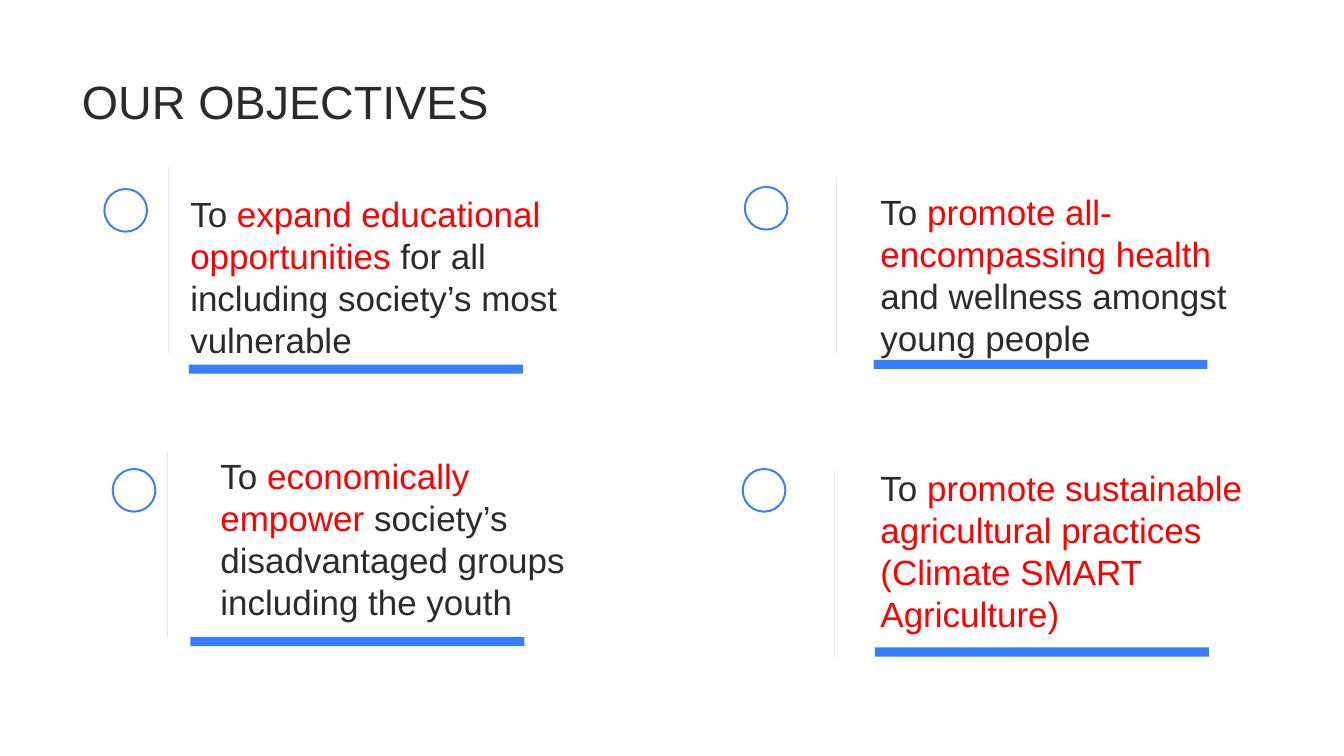
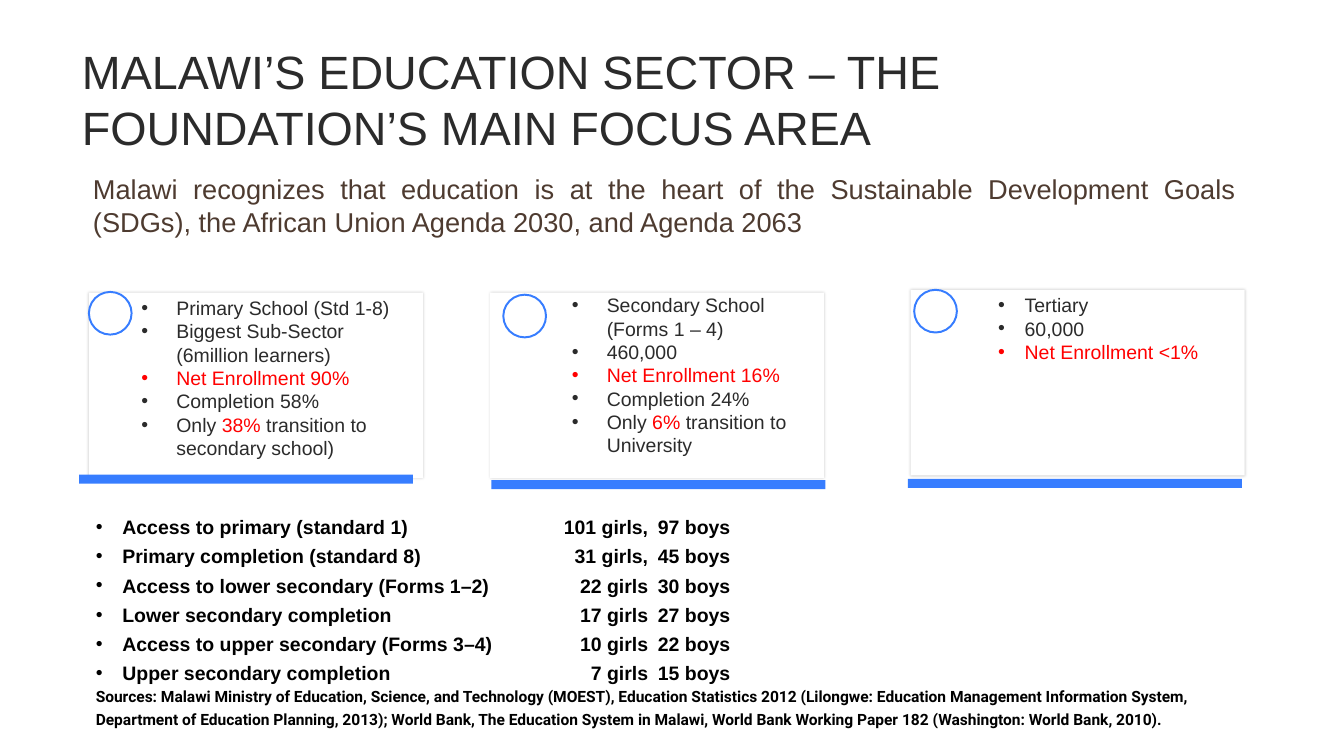
from lxml.etree import SubElement
from pptx import Presentation
from pptx.dml.color import RGBColor
from pptx.enum.shapes import MSO_CONNECTOR, MSO_SHAPE
from pptx.enum.text import MSO_ANCHOR, MSO_AUTO_SIZE, PP_ALIGN
from pptx.oxml.ns import qn
from pptx.util import Inches, Pt

INK = RGBColor(0x2B, 0x2B, 0x2B)
BLACK = RGBColor(0, 0, 0)
RED = RGBColor(0xFF, 0, 0)
BLUE = RGBColor(0x37, 0x7D, 0xFF)
BROWN = RGBColor(0x4E, 0x3B, 0x30)
GREY = RGBColor(0xE6, 0xE6, 0xE6)
WHITE = RGBColor(0xFF, 0xFF, 0xFF)
BAR = (4.77, 0.13)
RING = (0.61, 0.61)
CARD = (4.77, 2.65)


def write(box, text, size=20, color=INK, font="Arial", bold=False,
          align=PP_ALIGN.LEFT, indent=0, space=None):
    frame = box.text_frame
    frame.word_wrap = True
    frame.auto_size = MSO_AUTO_SIZE.NONE
    for row, line in enumerate(text.split("\n")):
        para = frame.add_paragraph() if row else frame.paragraphs[0]
        para.alignment = align
        if space:
            para.line_spacing = space
        if indent:
            props = para._p.get_or_add_pPr()
            props.set("marL", str(Inches(indent)))
            props.set("indent", str(-Inches(indent)))
            SubElement(props, qn("a:buFont")).set("typeface", "Arial")
            SubElement(props, qn("a:buChar")).set("char", "•")
        for part, words in enumerate(line.split("|")):
            if words:
                run = para.add_run()
                run.text = words
                run.font.size = Pt(size)
                run.font.name = font
                run.font.bold = bold
                run.font.color.rgb = RED if part % 2 else color


def draw(slide, kind, spot, size, fill, line=None):
    shape = slide.shapes.add_shape(kind, *map(Inches, spot + size))
    shape.shadow.inherit = False
    shape.fill.solid()
    shape.fill.fore_color.rgb = fill
    if line:
        shape.line.color.rgb = line
        shape.line.width = Pt(2)
    else:
        shape.line.fill.background()
    return shape


deck = Presentation()
deck.slide_width, deck.slide_height = Inches(19.2), Inches(10.8)

slides = []
for text, place in [
    ("OUR OBJECTIVES", (1.07, 0.85, 10.72, 1.19)),
    ("MALAWI’S EDUCATION SECTOR – THE FOUNDATION’S MAIN FOCUS AREA",
     (1.07, 0.62, 16.67, 1.58)),
]:
    slide = deck.slides.add_slide(deck.slide_layouts[5])
    title = slide.shapes.title
    title.left, title.top, title.width, title.height = map(Inches, place)
    title.text_frame.vertical_anchor = MSO_ANCHOR.MIDDLE
    write(title, text, size=48)
    slides.append(slide)
goals, sector = slides

for text, place, ring, bar, rule, weight in [
    ("To |expand educational opportunities |for all including society’s most vulnerable",
     (2.62, 2.7, 6.44, 2.52), (1.49, 2.7), (2.7, 5.21), (2.4, 2.39, 5.04), 1),
    ("To |promote all-encompassing health |and wellness amongst young people",
     (12.48, 2.67, 5.87, 2.52), (10.64, 2.67), (12.48, 5.14), (11.94, 2.53, 5.04), 0.5),
    ("To |economically empower |society’s disadvantaged groups including the youth",
     (3.05, 6.45, 5.73, 2.52), (1.61, 6.7), (2.72, 9.1), (2.39, 6.46, 9.1), 1),
    ("To |promote sustainable agricultural practices (Climate SMART Agriculture)",
     (12.48, 6.62, 5.6, 2.52), (10.61, 6.7), (12.5, 9.25), (11.92, 6.73, 9.38), 1),
]:
    draw(goals, MSO_SHAPE.RECTANGLE, bar, BAR, BLUE)
    draw(goals, MSO_SHAPE.OVAL, ring, RING, WHITE, BLUE)
    write(goals.shapes.add_textbox(*map(Inches, place)), text, size=36)
    x, top, end = map(Inches, rule)
    line = goals.shapes.add_connector(MSO_CONNECTOR.STRAIGHT, x, top, x, end)
    line.line.color.rgb = GREY
    line.line.width = Pt(weight)
    SubElement(line._element.spPr, qn("a:effectLst"))

intro = sector.shapes.add_textbox(*map(Inches, (1.23, 2.41, 16.51, 1.04)))
write(intro, "Malawi recognizes that education is at the heart of the Sustainable "
      "Development Goals (SDGs), the African Union Agenda 2030, and Agenda 2063",
      size=28, color=BROWN, align=PP_ALIGN.JUSTIFY)

for text, place, indent, card, ring, bar in [
    ("Primary School (Std 1-8)\nBiggest Sub-Sector (6million learners)\n"
     "|Net Enrollment 90%\nCompletion 58%\nOnly |38% |transition to secondary school)",
     (1.92, 4.18, 3.98, 2.46), 0.5, (1.27, 4.18), (1.27, 4.17), (1.13, 6.78)),
    ("Secondary School (Forms 1 – 4)\n460,000\n"
     "|Net Enrollment 16%\nCompletion 24%\nOnly |6% |transition to University",
     (8.07, 4.14, 3.43, 2.46), 0.5, (7, 4.18), (7.19, 4.21), (7.02, 6.86)),
    ("Tertiary\n60,000\n|Net Enrollment <1%",
     (14.16, 4.14, 3.12, 1.82), 0.38, (13.01, 4.14), (13.06, 4.14), (12.97, 6.84)),
]:
    panel = draw(sector, MSO_SHAPE.RECTANGLE, card, CARD, WHITE)
    glow = SubElement(panel._element.spPr.find(qn("a:effectLst")), qn("a:outerShdw"))
    glow.set("blurRad", str(Pt(3)))
    glow.set("dist", "0")
    tint = SubElement(glow, qn("a:srgbClr"))
    tint.set("val", str(BLACK))
    SubElement(tint, qn("a:alpha")).set("val", "20000")
    draw(sector, MSO_SHAPE.RECTANGLE, bar, BAR, BLUE)
    draw(sector, MSO_SHAPE.OVAL, ring, RING, WHITE, BLUE)
    write(sector.shapes.add_textbox(*map(Inches, place)), text, indent=indent)

stats = [
    ("Access to primary (standard 1)", "101 girls,", "97 boys"),
    ("Primary completion (standard 8)", "31 girls,", "45 boys"),
    ("Access to lower secondary (Forms 1–2)", "22 girls", "30 boys"),
    ("Lower secondary completion", "17 girls", "27 boys"),
    ("Access to upper secondary (Forms 3–4)", "10 girls", "22 boys"),
    ("Upper secondary completion", "7 girls", "15 boys"),
]
for cells, left, width, indent, align in zip(
        zip(*stats), (1.27, 7.4, 9.3), (6.1, 1.96, 1.6), (0.38, 0, 0),
        (PP_ALIGN.LEFT, PP_ALIGN.RIGHT, PP_ALIGN.LEFT)):
    box = sector.shapes.add_textbox(*map(Inches, (left, 7.23, width, 2.5)))
    write(box, "\n".join(cells), color=BLACK, bold=True, align=align,
          indent=indent, space=1.25)

source = sector.shapes.add_textbox(*map(Inches, (1.27, 9.7, 16.81, 0.8)))
write(source, "Sources: Malawi Ministry of Education, Science, and Technology (MOEST), "
      "Education Statistics 2012 (Lilongwe: Education Management Information System, "
      "Department of Education Planning, 2013); World Bank, The Education System in "
      "Malawi, World Bank Working Paper 182 (Washington: World Bank, 2010).",
      size=16, color=BLACK, font="Roboto", bold=True, space=1.25)

deck.save("out.pptx")
